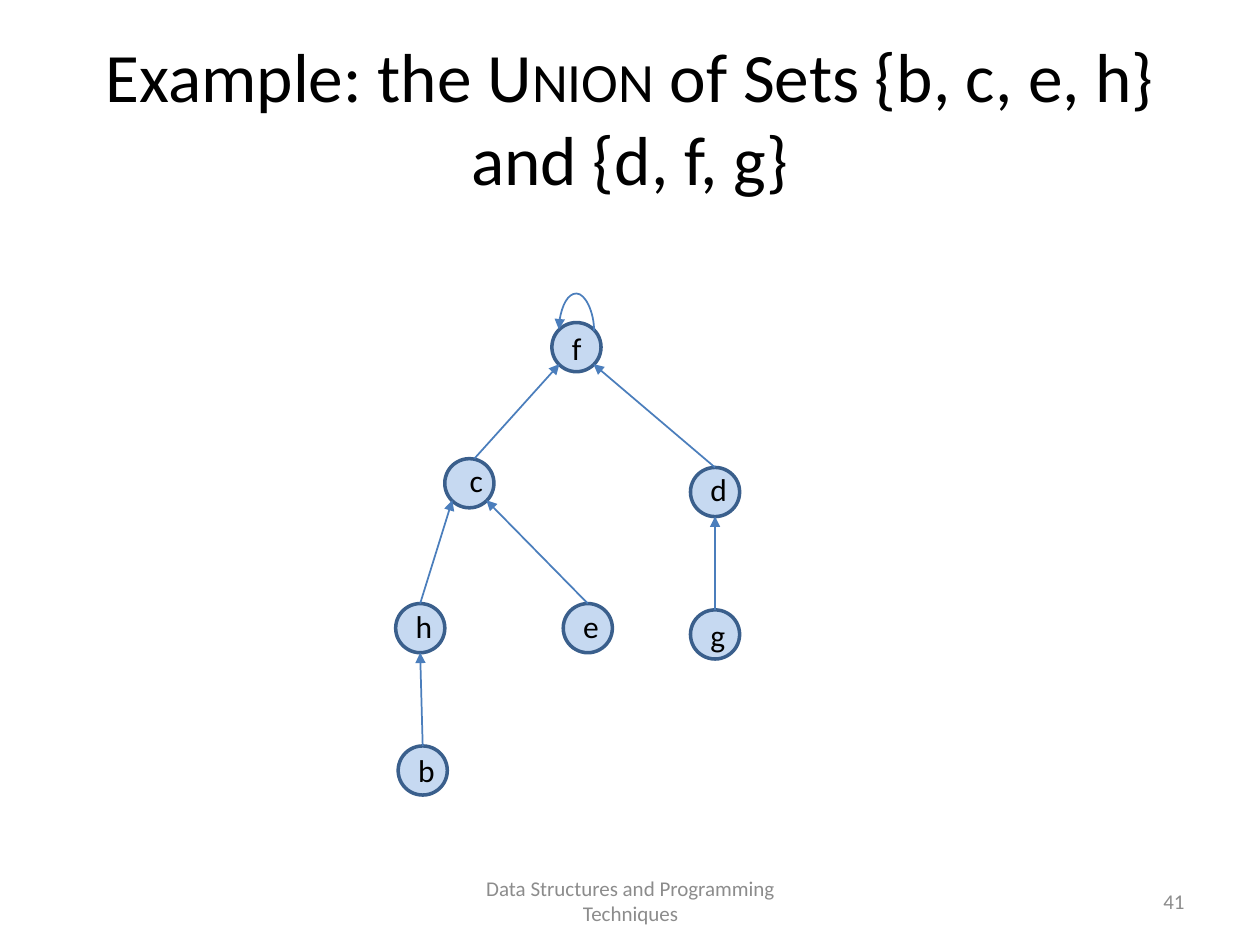
from lxml import etree
from pptx import Presentation
from pptx.dml.color import RGBColor
from pptx.enum.shapes import MSO_CONNECTOR as Link, MSO_SHAPE as Shape
from pptx.enum.text import MSO_ANCHOR as Anchor, PP_ALIGN as Align
from pptx.oxml.ns import qn
from pptx.util import Inches, Pt

BLACK = RGBColor(0x00, 0x00, 0x00)
GREY = RGBColor(0x8C, 0x8C, 0x8C)
PALE = RGBColor(0xC6, 0xD9, 0xF1)
NAVY = RGBColor(0x3A, 0x5F, 0x8C)
BLUE = RGBColor(0x4B, 0x7E, 0xBC)
SIZE = 0.39

deck = Presentation()
deck.slide_width, deck.slide_height = Inches(10), Inches(7.5)
slide = deck.slides.add_slide(deck.slide_layouts[6])
shapes = slide.shapes


def add_text(parts, box, size, color, align=Align.CENTER, anchor=Anchor.MIDDLE, wrap=True):
    """Add a one-paragraph text box with one run per part; return its runs."""
    frame = shapes.add_textbox(*map(Inches, box)).text_frame
    frame.word_wrap = wrap
    frame.vertical_anchor = anchor
    para = frame.paragraphs[0]
    para.alignment = align
    for part in parts:
        run = para.add_run()
        run.text = part
        run.font.name = "Calibri"
        run.font.size = Pt(size)
        run.font.color.rgb = color
    return para.runs


def add_arrow(kind, start, end):
    arrow = shapes.add_connector(kind, *map(Inches, (*start, *end)))
    arrow.line.color.rgb = BLUE
    arrow.line.width = Pt(1)
    tip = etree.SubElement(arrow.line._get_or_add_ln(), qn("a:tailEnd"))
    tip.set("type", "triangle")
    etree.SubElement(arrow._element.spPr, qn("a:effectLst"))
    return arrow


# Title and footer
title = add_text(["Example: the ", "Union", " of Sets {b, c, e, h} and {d, f, g}"],
                 (0.5, 0.3, 9, 1.25), 39.6, BLACK)
title[1].font._element.set("cap", "small")
add_text(["Data Structures and Programming Techniques"], (3.42, 6.95, 3.17, 0.4), 12, GREY)
add_text(["41"], (7.17, 6.95, 2.33, 0.4), 12, GREY, Align.RIGHT)

# Nodes: left, top, then the shift of the letter box
nodes = {
    "c": (3.53, 3.64, 0.10, -0.03),
    "h": (3.14, 4.79, 0.06, -0.02),
    "e": (4.47, 4.79, 0.06, -0.02),
    "b": (3.16, 5.92, 0.06, -0.01),
    "g": (5.48, 4.84, 0.06, 0),
    "d": (5.48, 3.71, 0.06, -0.03),
    "f": (4.38, 2.56, 0.06, 0),
}
discs = {}
for name, (left, top, dx, dy) in nodes.items():
    disc = shapes.add_shape(Shape.OVAL, *map(Inches, (left, top, SIZE, SIZE)))
    disc.shadow.inherit = False
    disc.fill.solid()
    disc.fill.fore_color.rgb = PALE
    disc.line.color.rgb = NAVY
    disc.line.width = Pt(2)
    discs[name] = disc

# Arrows from the top of each child to a point on its parent
ports = {"left": (0.06, 0.33), "mid": (SIZE / 2, SIZE), "right": (0.33, 0.33)}
edges = [("b", "h", "mid"), ("h", "c", "left"), ("e", "c", "right"),
         ("d", "f", "right"), ("g", "d", "mid"), ("c", "f", "left")]
for child, parent, port in edges:
    left, top = nodes[child][:2]
    px, py = nodes[parent][:2]
    dx, dy = ports[port]
    shift = 0.04 if child == "c" else 0
    arrow = add_arrow(Link.STRAIGHT, (left + SIZE / 2 + shift, top), (px + dx, py + dy))
    if not shift:
        arrow.begin_connect(discs[child], 0)

# Loop of the root: a curve turned by 270 degrees that bulges upwards
loop = add_arrow(Link.CURVE, (4.57, 2.76), (4.58, 2.48))
spot = loop._element.spPr
spot.find(qn("a:xfrm")).set("rot", "16200000")
geom = spot.find(qn("a:prstGeom"))
guides = geom.find(qn("a:avLst"))
if guides is None:
    guides = etree.SubElement(geom, qn("a:avLst"))
bulge = etree.SubElement(guides, qn("a:gd"))
bulge.set("name", "adj1")
bulge.set("fmla", "val 3000000")

# Letters
for name, (left, top, dx, dy) in nodes.items():
    add_text([name], (left + dx, top + dy, 0.27, 0.4), 18, BLACK, anchor=Anchor.TOP, wrap=False)

deck.save("out.pptx")
